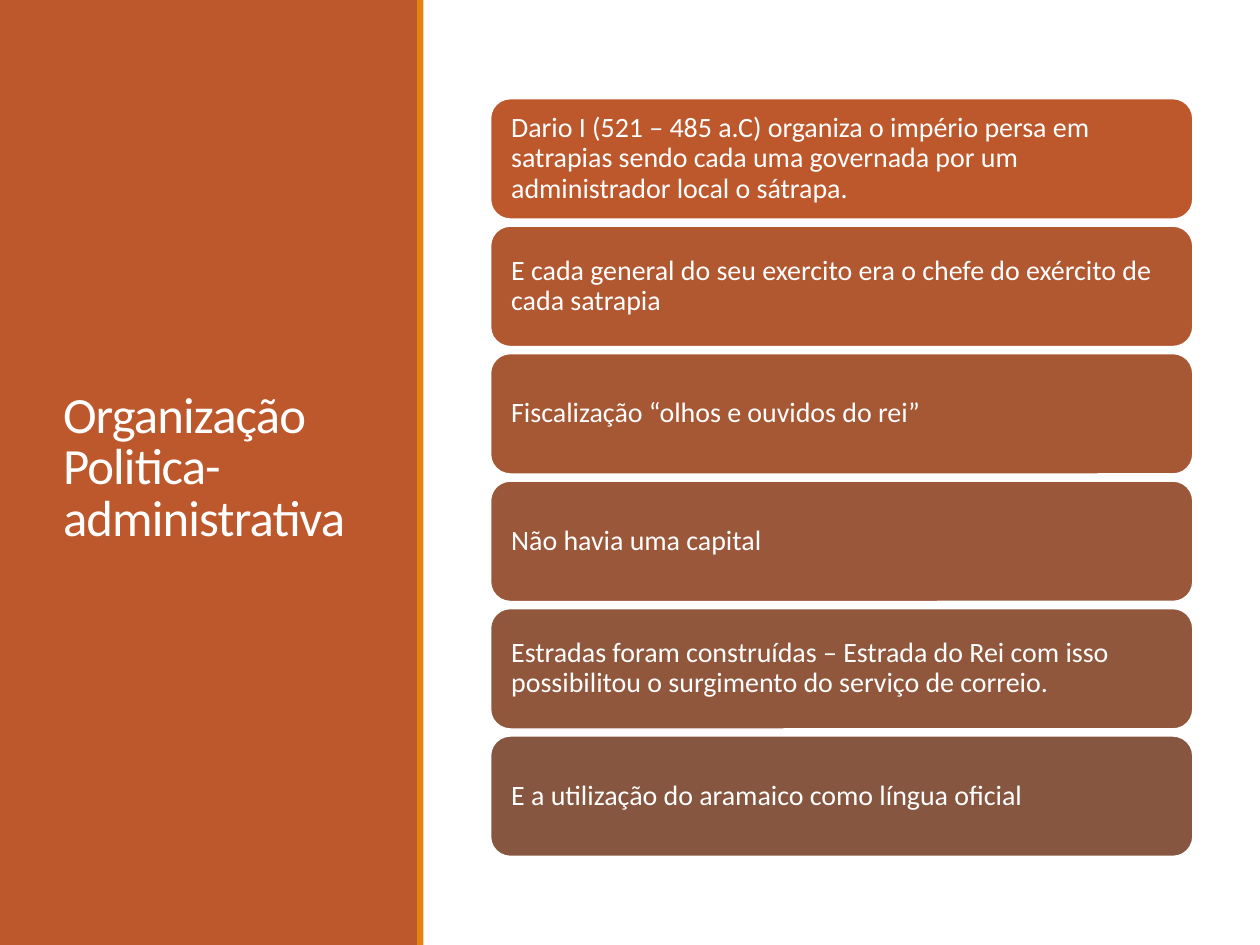
from pptx import Presentation
from pptx.dml.color import RGBColor
from pptx.enum.shapes import MSO_SHAPE
from pptx.enum.text import MSO_ANCHOR, MSO_AUTO_SIZE, PP_ALIGN
from pptx.util import Inches, Pt

WHITE = RGBColor(0xFF, 0xFF, 0xFF)
RUST = RGBColor(0xBD, 0x58, 0x2C)
ORANGE = RGBColor(0xE4, 0x83, 0x12)
FONT = "Calibri"

TITLE = "Organização Politica-administrativa"
TOPICS = [
    ("Dario I (521 – 485 a.C) organiza o império persa em satrapias sendo cada uma "
     "governada por um administrador local o sátrapa.", RUST),
    ("E cada general do seu exercito era o chefe do exército de cada satrapia",
     RGBColor(0xB1, 0x58, 0x31)),
    ("Fiscalização “olhos e ouvidos do rei”", RGBColor(0xA6, 0x58, 0x35)),
    ("Não havia uma capital", RGBColor(0x9B, 0x57, 0x39)),
    ("Estradas foram construídas – Estrada do Rei com isso possibilitou o surgimento "
     "do serviço de correio.", RGBColor(0x90, 0x57, 0x3D)),
    ("E a utilização do aramaico como língua oficial", RGBColor(0x86, 0x56, 0x40)),
]


def add_filled(slide, kind, left, top, width, height, color):
    """Add a flat shape without outline; lengths in inches."""
    sp = slide.shapes.add_shape(
        kind, Inches(left), Inches(top), Inches(width), Inches(height))
    sp.shadow.inherit = False
    sp.fill.solid()
    sp.fill.fore_color.rgb = color
    sp.line.fill.background()
    return sp


def set_text(sp, text, size, line_spacing):
    """Write one left-aligned white paragraph, centred vertically."""
    tf = sp.text_frame
    tf.text = text
    tf.word_wrap = True
    tf.auto_size = MSO_AUTO_SIZE.NONE
    tf.vertical_anchor = MSO_ANCHOR.MIDDLE
    p = tf.paragraphs[0]
    p.alignment = PP_ALIGN.LEFT
    p.line_spacing = line_spacing
    r = p.runs[0]
    r.font.name = FONT
    r.font.size = Pt(size)
    r.font.color.rgb = WHITE
    return r


def add_title_panel(slide, left, top, width, height):
    """Place the coloured side panel, its edge stripe and the title."""
    panel = add_filled(slide, MSO_SHAPE.RECTANGLE, left, top, width, height, RUST)
    add_filled(slide, MSO_SHAPE.RECTANGLE, left + width - 0.01, top, 0.05, height, ORANGE)
    title = slide.shapes.title
    title.element.addprevious(panel.element)
    title.left, title.top = Inches(left + 0.4), Inches(top + 0.57)
    title.width, title.height = Inches(width - 0.79), Inches(height - 1.19)
    r = set_text(title, TITLE, 29, 0.85)
    r.font._element.set("spc", "-50")


def add_topics(slide, left, top, width, height, gap=0.05):
    """Stack the topics as equal rounded boxes filling the given box."""
    box_height = (height - gap * (len(TOPICS) - 1)) / len(TOPICS)
    for i, (text, color) in enumerate(TOPICS):
        sp = add_filled(slide, MSO_SHAPE.ROUNDED_RECTANGLE, left,
                        top + i * (box_height + gap), width, box_height, color)
        sp.line.color.rgb = WHITE
        sp.line.width = Pt(1.25)
        tf = sp.text_frame
        tf.margin_left = tf.margin_right = Inches(0.12)
        tf.margin_top = tf.margin_bottom = Inches(0.11)
        set_text(sp, text, 16, 0.9)


def main():
    """Build and save the slide."""
    prs = Presentation()
    prs.slide_width, prs.slide_height = Inches(10), Inches(7.5)
    slide = prs.slides.add_slide(prs.slide_layouts[5])
    add_title_panel(slide, 0, 0, 3.32, 7.5)
    add_topics(slide, 3.89, 0.78, 5.58, 6.02)
    prs.save("out.pptx")


if __name__ == "__main__":
    main()
